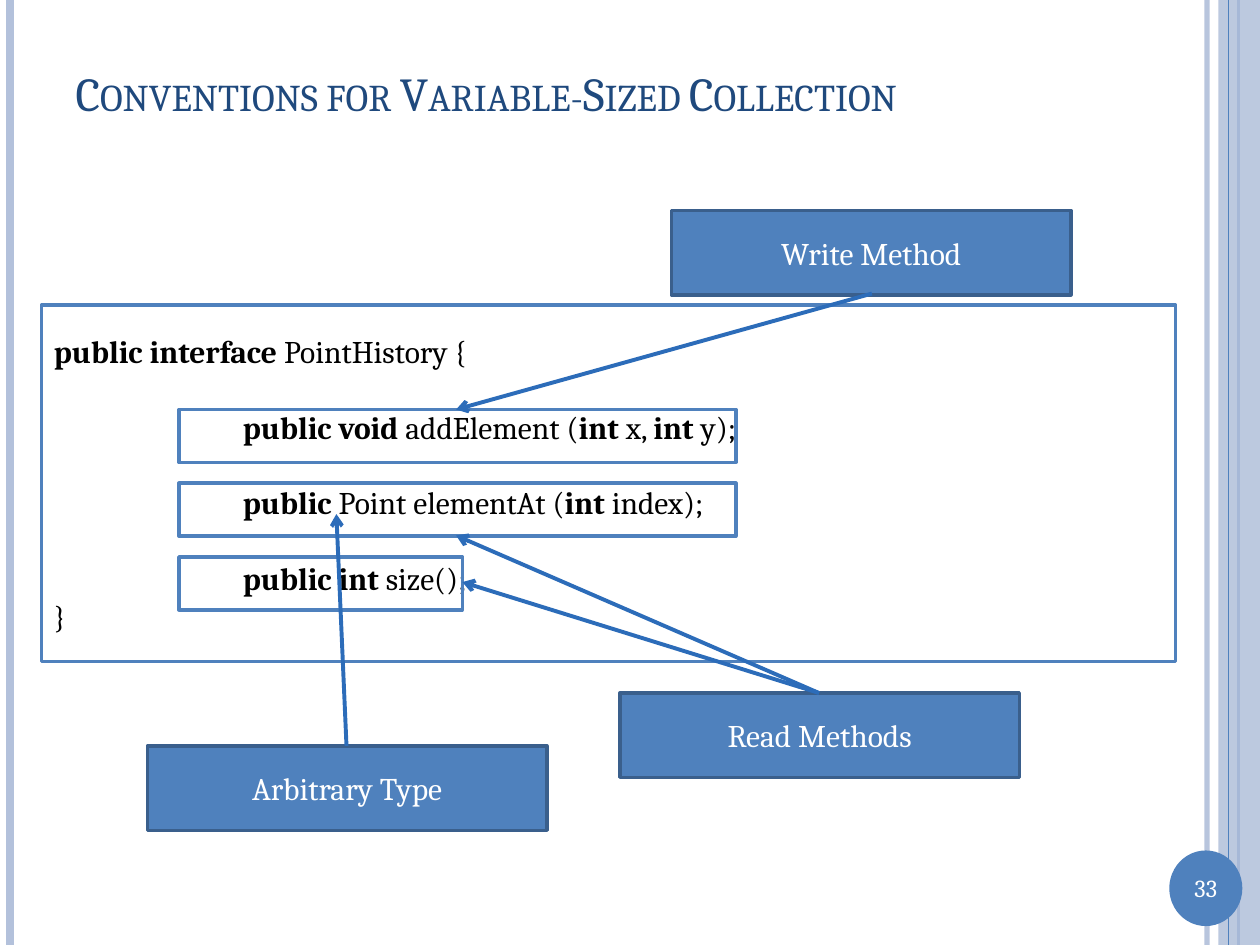
from lxml import etree
from pptx import Presentation
from pptx.dml.color import RGBColor
from pptx.enum.shapes import MSO_CONNECTOR, MSO_SHAPE
from pptx.enum.text import MSO_ANCHOR, PP_ALIGN
from pptx.oxml.ns import qn
from pptx.util import Inches, Pt

RECT, OVAL = MSO_SHAPE.RECTANGLE, MSO_SHAPE.OVAL
STRAIGHT = MSO_CONNECTOR.STRAIGHT
LEFT, CENTER = PP_ALIGN.LEFT, PP_ALIGN.CENTER
MIDDLE = MSO_ANCHOR.MIDDLE
FONT = "Cambria"
COLORS = {
    "white": "FFFFFF", "black": "000000", "title": "1F497D", "blue": "4F81BD",
    "pale": "B3C1DB", "edge": "3A5F8C", "arrow": "2C6CB9",
}
CODE = [
    (0, 0, [("public interface ", True), ("PointHistory {", False)]),
    (1.5, 21.6, [("public void ", True), ("addElement (", False), ("int", True),
                 (" x, ", False), ("int", True), (" y);", False)]),
    (1.5, 21.6, [("public", True), (" Point elementAt (", False), ("int", True),
                 (" index);", False)]),
    (1.5, 21.6, [("public int", True), (" size();", False)]),
    (0, 0, [("}", False)]),
]
LABELS = [
    ("Read Methods", 4.92, 5.5),
    ("Write Method", 5.33, 1.67),
    ("Arbitrary Type", 1.17, 5.92),
]
ARROWS = [
    (6.5, 5.5, 3.67, 4.62),
    (6.5, 5.5, 3.62, 4.25),
    (6.92, 2.33, 3.62, 3.25),
    (2.75, 5.92, 2.67, 4.08),
]


def paint(color, name):
    color.rgb = RGBColor.from_string(COLORS[name])


def fade(props, percent):
    color = next(props.iter(qn("a:srgbClr")))
    etree.SubElement(color, qn("a:alpha"), val=str(percent * 1000))


def add_run(para, text, size, color, bold=False):
    run = para.add_run()
    run.text = text
    run.font.name, run.font.size, run.font.bold = FONT, Pt(size), bold
    paint(run.font.color, color)
    return run


def add_box(slide, kind, box, fill=None, edge=None):
    shape = slide.shapes.add_shape(kind, *map(Inches, box))
    shape.shadow.inherit = False
    if fill:
        shape.fill.solid()
        paint(shape.fill.fore_color, fill)
    else:
        shape.fill.background()
    if edge:
        paint(shape.line.color, edge)
        shape.line.width = Pt(2)
    else:
        shape.line.fill.background()
    return shape


def add_line(slide, ends, color, width):
    line = slide.shapes.add_connector(STRAIGHT, *map(Inches, ends))
    paint(line.line.color, color)
    line.line.width = Pt(width)
    etree.SubElement(line._element.spPr, qn("a:effectLst"))
    return line


def add_arrow(slide, ends):
    line = add_line(slide, ends, "arrow", 2.25)
    etree.SubElement(line.line._get_or_add_ln(), qn("a:tailEnd"), type="arrow")


def add_rule(slide, x, color, width):
    return add_line(slide, (x, 0, x, 7.5), color, width)


def add_frame(slide):
    rule = add_rule(slide, 9.58, "pale", 3)
    fade(rule._element.spPr, 93)
    add_rule(slide, 0.08, "pale", 4.5)
    add_rule(slide, 9.83, "blue", 1.5)
    band = add_box(slide, RECT, (9.67, 0, 0.33, 7.5), "pale")
    fade(band._element.spPr, 87)
    add_rule(slide, 9.75, "blue", 0.75)
    add_box(slide, OVAL, (9.28, 6.75, 0.58, 0.6), "blue")
    number = slide.shapes.add_textbox(*map(Inches, (9.28, 6.88, 0.58, 0.34)))
    number.text_frame.word_wrap = True
    para = number.text_frame.paragraphs[0]
    para.alignment = CENTER
    add_run(para, "33", 14, "white")


def add_title(slide, text):
    title = slide.shapes.title
    title.left, title.top = Inches(0.5), Inches(0.3)
    title.width, title.height = Inches(8.67), Inches(0.87)
    title.text_frame.vertical_anchor = MIDDLE
    para = title.text_frame.paragraphs[0]
    para.alignment = LEFT
    run = add_run(para, text, 27, "title")
    run.font._element.set("cap", "small")


def add_code(slide):
    frame = add_box(slide, RECT, (0.33, 2.42, 9, 2.83), "white", "blue").text_frame
    frame.vertical_anchor = MIDDLE
    for i, (indent, gap, runs) in enumerate(CODE):
        para = frame.add_paragraph() if i else frame.paragraphs[0]
        para.alignment = LEFT
        para.space_before = Pt(gap)
        para._p.get_or_add_pPr().set("marL", str(Inches(indent)))
        for text, bold in runs:
            add_run(para, text, 18, "black", bold)


def add_label(slide, text, x, y):
    frame = add_box(slide, RECT, (x, y, 3.17, 0.67), "blue", "edge").text_frame
    frame.vertical_anchor = MIDDLE
    para = frame.paragraphs[0]
    para.alignment = CENTER
    add_run(para, text, 18, "white")


def main():
    deck = Presentation()
    deck.slide_width, deck.slide_height = Inches(10), Inches(7.5)
    slide = deck.slides.add_slide(deck.slide_layouts[5])
    add_frame(slide)
    add_title(slide, "Conventions for Variable-Sized Collection")
    add_code(slide)
    for i, width in enumerate((4.42, 4.42, 2.25)):
        add_box(slide, RECT, (1.42, 3.25 + i * 0.585, width, 0.42), edge="blue")
    for label in LABELS:
        add_label(slide, *label)
    for ends in ARROWS:
        add_arrow(slide, ends)
    deck.save("out.pptx")


if __name__ == "__main__":
    main()
